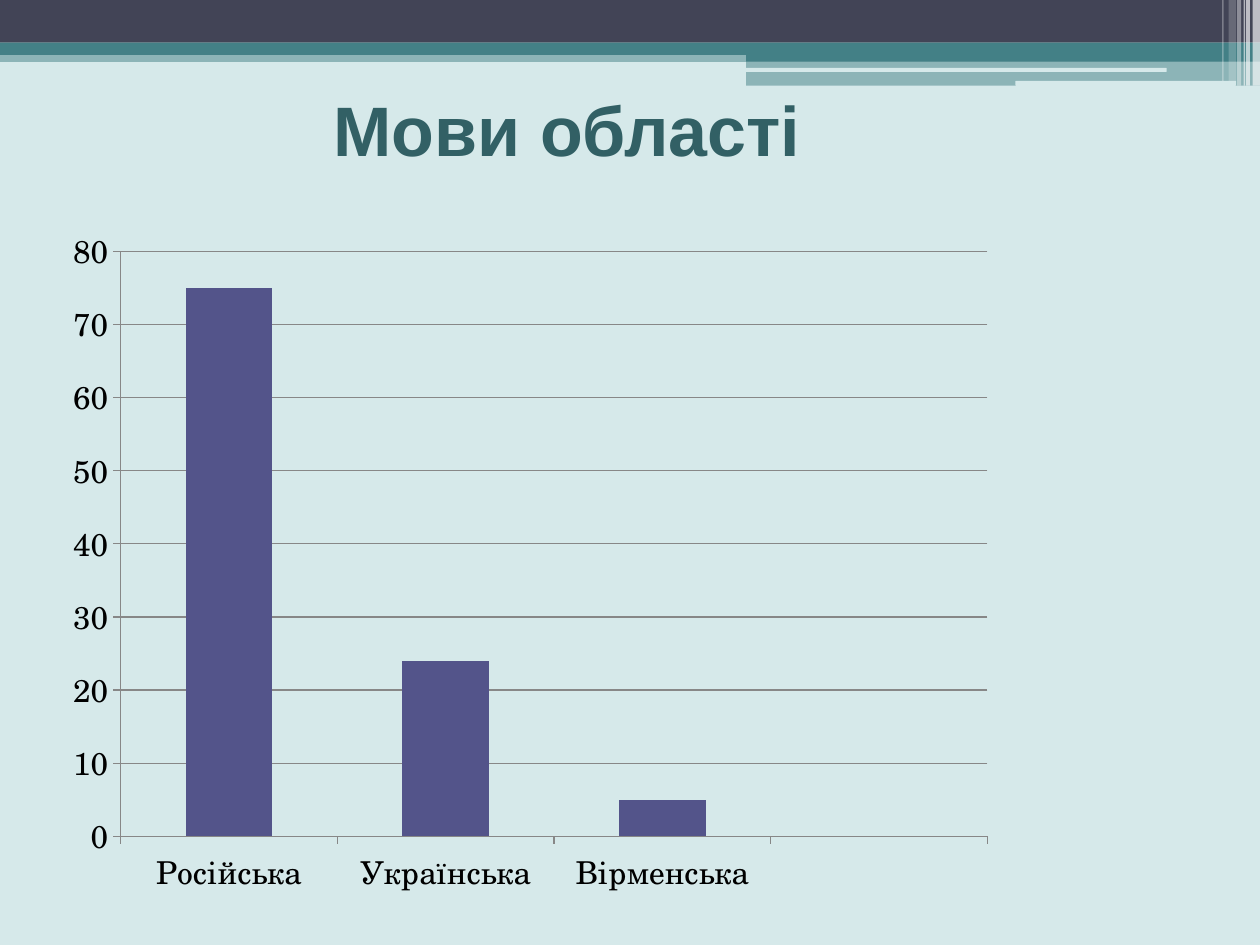
from dataclasses import dataclass

from lxml import etree
from pptx import Presentation
from pptx.chart.data import CategoryChartData
from pptx.dml.color import RGBColor
from pptx.enum.chart import XL_CHART_TYPE, XL_TICK_MARK
from pptx.enum.shapes import MSO_SHAPE
from pptx.enum.text import MSO_ANCHOR, MSO_AUTO_SIZE, PP_ALIGN
from pptx.oxml.ns import qn
from pptx.util import Cm, Pt

RECTANGLE = MSO_SHAPE.RECTANGLE
ROUNDED = MSO_SHAPE.ROUNDED_RECTANGLE
COLUMNS = XL_CHART_TYPE.COLUMN_CLUSTERED
TICK_OUTSIDE = XL_TICK_MARK.OUTSIDE
MIDDLE = MSO_ANCHOR.MIDDLE
NO_AUTOFIT = MSO_AUTO_SIZE.NONE
CENTER = PP_ALIGN.CENTER

TITLE_FONT = "Arial"
CHART_FONT = "TeX Gyre Schola"
TITLE_ONLY = 5
WIDTH, HEIGHT = 25.4, 19.05
SPLIT = 15.04
COLORS = {
    "background": "D6E9EA",
    "dark": "424456",
    "teal": "438086",
    "white": "FFFFFF",
    "title": "326065",
    "column": "53548A",
    "grid": "878787",
    "text": "000000",
}


@dataclass
class Band:
    left: float
    top: float
    width: float
    height: float
    color: str
    opacity: int = 100
    rounded: bool = False


HEADER_BANDS = [
    Band(0, 1.02, WIDTH, 0.23, "teal", 50),
    Band(0, 0, WIDTH, 0.86, "dark"),
    Band(0, 0.86, WIDTH, 0.25, "teal"),
    Band(SPLIT, 0.99, WIDTH - SPLIT, 0.25, "teal"),
    Band(SPLIT, 1.23, WIDTH - SPLIT, 0.5, "teal", 50),
    Band(15.01, 1.37, 8.51, 0.08, "background", rounded=True),
    Band(20.47, 1.63, 4.45, 0.1, "background", rounded=True),
]
CORNER_STRIPES = [
    Band(25.25, 0, 0.15, 1.73, "white", 65),
    Band(25.12, 0, 0.08, 1.73, "white", 65),
    Band(25.07, 0, 0.03, 1.73, "white", 60),
    Band(24.94, 0, 0.08, 1.73, "white", 40),
    Band(24.77, 0, 0.15, 1.63, "white", 20),
    Band(24.64, 0, 0.03, 1.63, "white", 30),
]


def rgb(name: str) -> RGBColor:
    return RGBColor.from_string(COLORS[name])


def draw_band(page, band: Band) -> None:
    box = page.shapes.add_shape(
        ROUNDED if band.rounded else RECTANGLE,
        Cm(band.left), Cm(band.top), Cm(band.width), Cm(band.height),
    )
    box.shadow.inherit = False
    box.line.fill.background()
    box.fill.solid()
    box.fill.fore_color.rgb = rgb(band.color)
    if band.opacity < 100:
        color = box.element.spPr.find(f"{qn('a:solidFill')}/{qn('a:srgbClr')}")
        etree.SubElement(color, qn("a:alpha"), val=str(band.opacity * 1000))


def write_title(page, text: str) -> None:
    title = page.shapes.title
    title.left, title.top = Cm(0), Cm(1.32)
    title.width, title.height = Cm(22.86), Cm(2.54)
    title.element.getparent().append(title.element)
    frame = title.text_frame
    frame.word_wrap = True
    frame.auto_size = NO_AUTOFIT
    frame.vertical_anchor = MIDDLE
    para = frame.paragraphs[0]
    para.alignment = CENTER
    span = para.add_run()
    span.text = text
    span.font.name = TITLE_FONT
    span.font.size = Pt(40)
    span.font.bold = True
    span.font.color.rgb = rgb("title")


def style_line(line) -> None:
    line.color.rgb = rgb("grid")
    line.width = Pt(0.75)


def draw_languages_chart(page) -> None:
    data = CategoryChartData()
    data.categories = ["Російська", "Українська", "Вірменська", ""]
    data.add_series("Series 1", [75, 24, 5, None])
    chart = page.shapes.add_chart(
        COLUMNS, Cm(1.09), Cm(4.32), Cm(19.2), Cm(14), data
    ).chart
    chart.has_legend = False
    chart.has_title = False
    chart.font.name = CHART_FONT
    chart.font.size = Pt(18)
    chart.font.color.rgb = rgb("text")

    plot = chart.plots[0]
    plot.gap_width = 150
    plot.vary_by_categories = False
    fill = plot.series[0].format.fill
    fill.solid()
    fill.fore_color.rgb = rgb("column")

    for axis in (chart.category_axis, chart.value_axis):
        axis.major_tick_mark = TICK_OUTSIDE
        style_line(axis.format.line)
    values = chart.value_axis
    values.minimum_scale, values.maximum_scale, values.major_unit = 0, 80, 10
    values.has_major_gridlines = True
    style_line(values.major_gridlines.format.line)


def main() -> None:
    deck = Presentation()
    deck.slide_width, deck.slide_height = Cm(WIDTH), Cm(HEIGHT)
    page = deck.slides.add_slide(deck.slide_layouts[TITLE_ONLY])
    page.background.fill.solid()
    page.background.fill.fore_color.rgb = rgb("background")
    for band in HEADER_BANDS + CORNER_STRIPES:
        draw_band(page, band)
    write_title(page, "Мови області")
    draw_languages_chart(page)
    deck.save("out.pptx")


if __name__ == "__main__":
    main()
